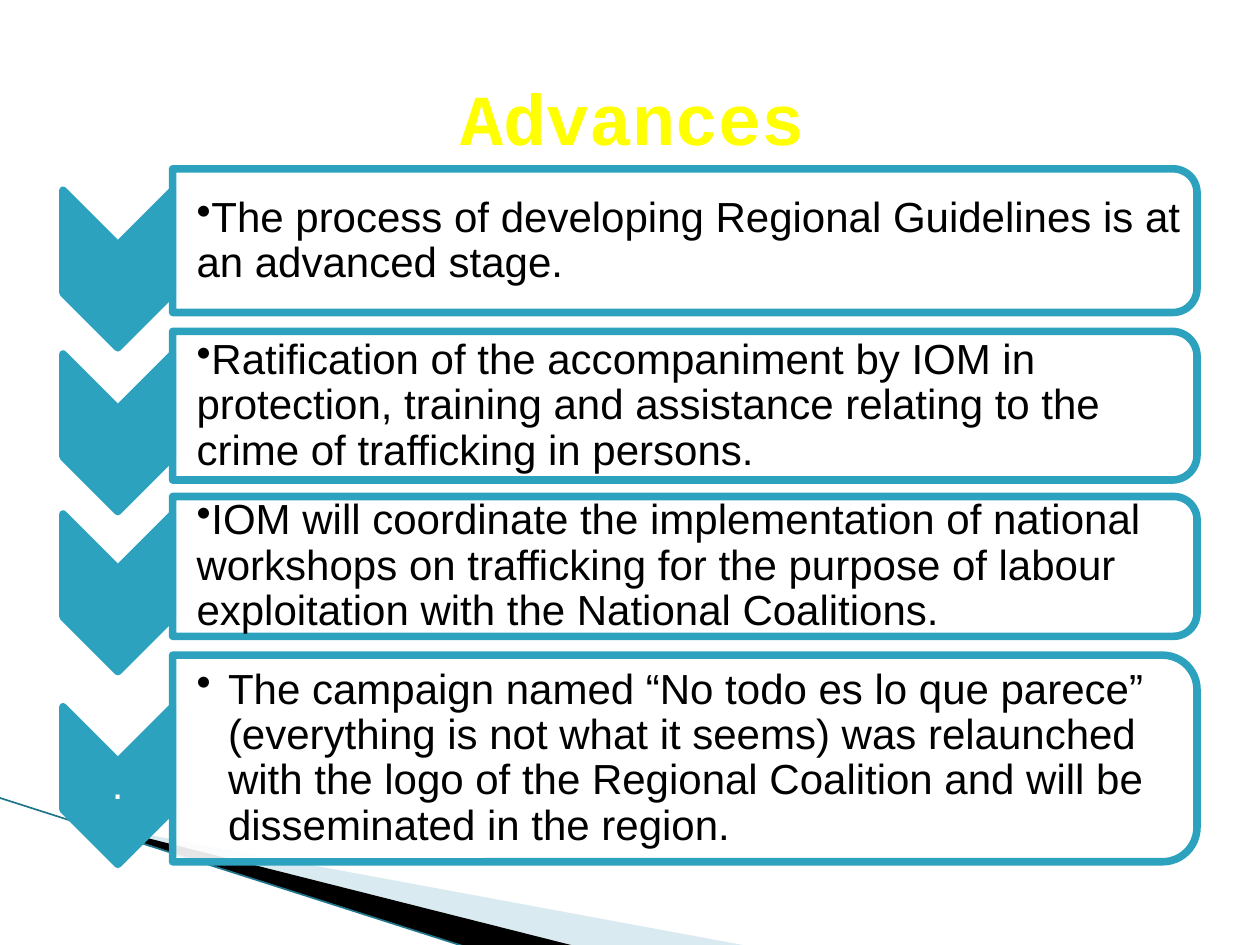
from dataclasses import dataclass

from lxml import etree
from pptx import Presentation
from pptx.dml.color import RGBColor
from pptx.enum.shapes import MSO_CONNECTOR, MSO_SHAPE
from pptx.enum.text import MSO_ANCHOR, PP_ALIGN
from pptx.oxml.ns import qn
from pptx.util import Inches, Pt

CHEVRON = MSO_SHAPE.CHEVRON
ROUNDED_BAR = MSO_SHAPE.ROUND_2_SAME_RECTANGLE
STRAIGHT = MSO_CONNECTOR.STRAIGHT
MIDDLE = MSO_ANCHOR.MIDDLE
LEFT, CENTER = PP_ALIGN.LEFT, PP_ALIGN.CENTER

TEAL = RGBColor(0x2D, 0xA2, 0xBF)
DARK_TEAL = RGBColor(0x1F, 0x76, 0x8C)
PALE_BLUE = RGBColor(0xA0, 0xCB, 0xDC)
YELLOW = RGBColor(0xFF, 0xFF, 0x00)
BLACK = RGBColor(0x00, 0x00, 0x00)
WHITE = RGBColor(0xFF, 0xFF, 0xFF)

CHEVRON_LEFT, CHEVRON_WIDTH, CHEVRON_HEIGHT = 0.5, 0.87, 1.25
BAR_LEFT, BAR_WIDTH = 1.37, 8.13
TEXT_WIDTH = 8.07
BORDER = 4.33


@dataclass(frozen=True)
class Advance:
    text: str
    chevron_top: float
    bar_top: float
    bar_height: float
    text_top: float
    text_height: float
    hanging: float = 0
    mark: str = ""


ADVANCES = [
    Advance("The process of developing Regional Guidelines is at an advanced stage.",
            1.51, 1.34, 1.14, 1.4, 1.03),
    Advance("Ratification of the accompaniment by IOM in protection, training and "
            "assistance relating to the crime of trafficking in persons.",
            2.81, 2.63, 1.18, 2.69, 1.07),
    Advance("IOM will coordinate the implementation of national workshops on "
            "trafficking for the purpose of labour exploitation with the "
            "National Coalitions.",
            4.08, 3.94, 1.11, 3.99, 1.01),
    Advance("The campaign named “No todo es lo que parece” (everything is not what "
            "it seems) was relaunched with the logo of the Regional Coalition and "
            "will be disseminated in the region.",
            5.61, 5.2, 1.64, 5.28, 1.48, hanging=0.25, mark="."),
]


def set_opacity(shape, percent: int) -> None:
    color = shape.fill._xPr.find(qn("a:solidFill"))[0]
    etree.SubElement(color, qn("a:alpha"), val=str(percent * 1000))


def add_swoosh(slide, points, color: RGBColor, opacity: int = 100) -> None:
    corners = [(Inches(x), Inches(y)) for x, y in points]
    builder = slide.shapes.build_freeform(*corners[0])
    builder.add_line_segments(corners[1:], close=True)
    swoosh = builder.convert_to_shape()
    swoosh.shadow.inherit = False
    swoosh.fill.solid()
    swoosh.fill.fore_color.rgb = color
    set_opacity(swoosh, opacity)
    swoosh.line.fill.background()


def add_edge_line(slide) -> None:
    edge = slide.shapes.add_connector(
        STRAIGHT, Inches(-0.01), Inches(6.33), Inches(3.71), Inches(7.52))
    edge.line.color.rgb = DARK_TEAL
    edge.line.width = Pt(0.95)
    etree.SubElement(edge._element.spPr, qn("a:effectLst"))


def add_turned_shape(slide, kind, left: float, top: float, width: float,
                     height: float, color: RGBColor, opacity: int = 100) -> None:
    """Fill the given visible box with a preset shape turned by 90 degrees."""
    shift = (width - height) / 2
    shape = slide.shapes.add_shape(
        kind, Inches(left + shift), Inches(top - shift), Inches(height), Inches(width))
    shape.rotation = 90
    shape.shadow.inherit = False
    shape.fill.solid()
    shape.fill.fore_color.rgb = color
    set_opacity(shape, opacity)
    shape.line.color.rgb = TEAL
    shape.line.width = Pt(BORDER)


def add_text(slide, text: str, left: float, top: float, width: float, height: float,
             *, size: float = 24, font: str = "Arial", color: RGBColor = BLACK,
             bold: bool = False, align=LEFT, spacing: float = 0.9,
             inset_left: float = 0.02, inset: float = 0.02,
             bullet: bool = False, hanging: float = 0) -> None:
    box = slide.shapes.add_textbox(Inches(left), Inches(top), Inches(width), Inches(height))
    frame = box.text_frame
    frame.word_wrap = True
    frame.vertical_anchor = MIDDLE
    frame.margin_left = Inches(inset_left)
    frame.margin_right = frame.margin_top = frame.margin_bottom = Inches(inset)
    paragraph = frame.paragraphs[0]
    paragraph.alignment = align
    paragraph.line_spacing = spacing
    if bullet:
        properties = paragraph._p.get_or_add_pPr()
        properties.set("marL", str(Inches(hanging)))
        properties.set("indent", str(-Inches(hanging)))
        etree.SubElement(properties, qn("a:buChar"), char="•")
    run = paragraph.add_run()
    run.text = text
    run.font.size = Pt(size)
    run.font.name = font
    run.font.bold = bold
    run.font.color.rgb = color


def add_advance(slide, advance: Advance) -> None:
    add_turned_shape(slide, CHEVRON, CHEVRON_LEFT, advance.chevron_top,
                     CHEVRON_WIDTH, CHEVRON_HEIGHT, TEAL)
    if advance.mark:
        add_text(slide, advance.mark, CHEVRON_LEFT, advance.chevron_top + 0.44,
                 CHEVRON_WIDTH, 0.37, color=WHITE, align=CENTER)
    add_turned_shape(slide, ROUNDED_BAR, BAR_LEFT, advance.bar_top,
                     BAR_WIDTH, advance.bar_height, WHITE, opacity=90)
    add_text(slide, advance.text, BAR_LEFT, advance.text_top, TEXT_WIDTH,
             advance.text_height, inset_left=0.19, bullet=True, hanging=advance.hanging)


def main() -> None:
    presentation = Presentation()
    presentation.slide_width = Inches(10)
    presentation.slide_height = Inches(7.5)
    slide = presentation.slides.add_slide(presentation.slide_layouts[6])

    add_swoosh(slide, [(0.55, 6.51), (5.95, 7.51), (4.56, 7.51), (0.55, 6.5)],
               PALE_BLUE, opacity=40)
    add_swoosh(slide, [(0.53, 6.49), (4.57, 7.51), (3.72, 7.52), (0.54, 6.5)], BLACK)
    add_edge_line(slide)
    for advance in ADVANCES:
        add_advance(slide, advance)
    add_text(slide, "Advances", 0.5, 0.3, 9, 1.25, size=41, font="Courier New",
             color=YELLOW, bold=True, align=CENTER, spacing=1.0,
             inset_left=0.1, inset=0.05)

    presentation.save("out.pptx")


if __name__ == "__main__":
    main()
